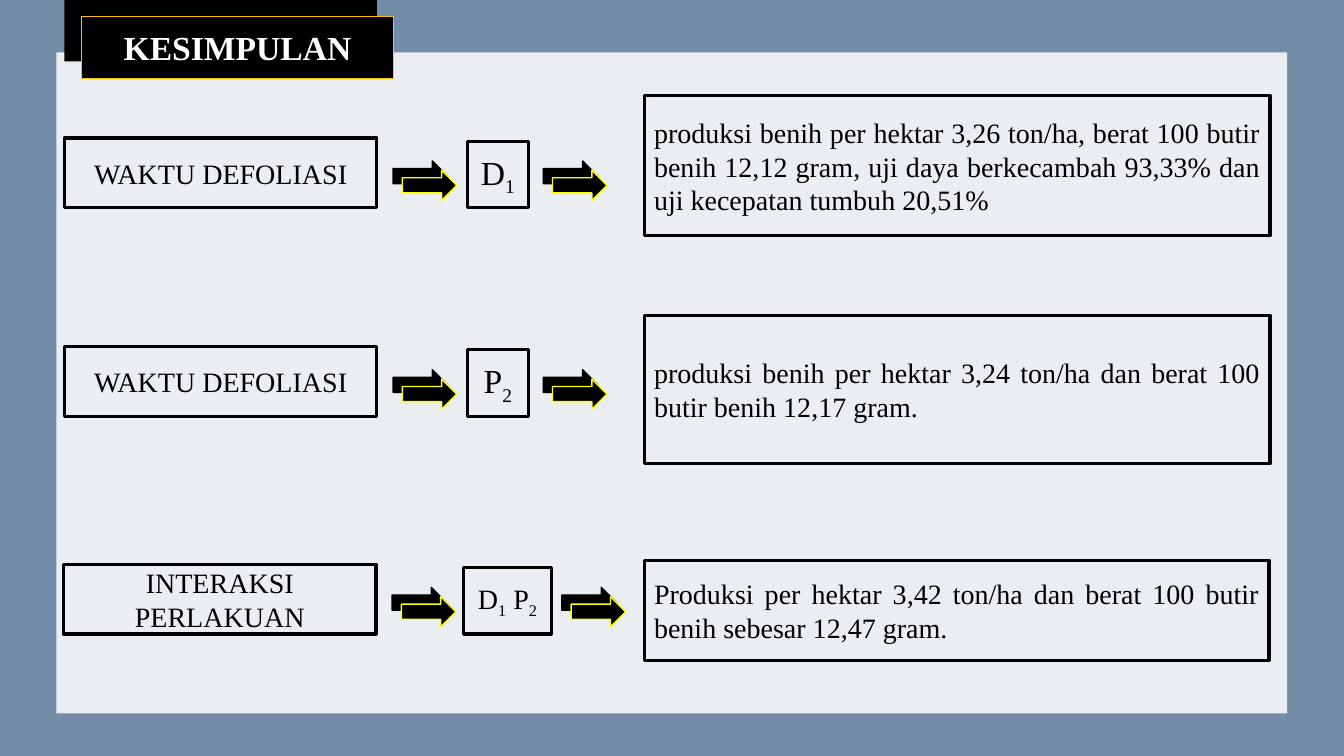
from itertools import groupby
from lxml import etree
from pptx import Presentation
from pptx.dml.color import RGBColor
from pptx.enum.shapes import MSO_SHAPE
from pptx.enum.text import MSO_ANCHOR, PP_ALIGN
from pptx.oxml.ns import qn
from pptx.util import Pt

RECT = MSO_SHAPE.RECTANGLE
ARROW = MSO_SHAPE.RIGHT_ARROW
MIDDLE = MSO_ANCHOR.MIDDLE
CENTER = PP_ALIGN.CENTER
JUSTIFY = PP_ALIGN.JUSTIFY

FONT = "Times New Roman"
COLORS = {
    "navy": "17406D",
    "white": "FFFFFF",
    "black": "000000",
    "yellow": "FFFF00",
    "gold": "FFC000",
}
WIDE, HIGH = 960, 540

ROWS = [
    {
        "box": (46.1, 98.6, 223.2, 49.7),
        "label": "WAKTU DEFOLIASI",
        "mark": "D1", "size": 24, "code": (334.1, 43.2), "next": 388.1,
        "text": "produksi benih per hektar 3,26 ton/ha, berat 100 butir benih 12,12 gram, "
                "uji daya berkecambah 93,33% dan uji kecepatan tumbuh 20,51%",
        "result": (460.1, 68.4, 447.1, 100.1),
    },
    {
        "box": (46.1, 247.7, 223.2, 49.7),
        "label": "WAKTU DEFOLIASI",
        "mark": "P2", "size": 24, "code": (334.1, 43.2), "next": 388.1,
        "text": "produksi benih per hektar 3,24 ton/ha dan berat 100 butir benih 12,17 gram.",
        "result": (460.1, 225.4, 447.1, 105.8),
    },
    {
        "box": (45.4, 403.2, 223.2, 49.7),
        "label": "INTERAKSI PERLAKUAN",
        "mark": "D1 P2", "size": 20, "code": (331.2, 62.6), "next": 401.4,
        "text": "Produksi per hektar 3,42 ton/ha dan berat 100 butir benih sebesar 12,47 gram.",
        "result": (460.1, 400.3, 446.4, 71.3),
    },
]


def tint(name):
    return RGBColor.from_string(COLORS[name])


def draw(slide, kind, box, fill=None, line=None, width=1):
    shape = slide.shapes.add_shape(kind, *[Pt(n) for n in box])
    shape.shadow.inherit = False
    if fill:
        shape.fill.solid()
        shape.fill.fore_color.rgb = tint(fill)
    else:
        shape.fill.background()
    if line:
        shape.line.color.rgb = tint(line)
        shape.line.width = Pt(width)
    else:
        shape.line.fill.background()
    return shape


def fade(shape, share):
    color = shape.fill._xPr.find(".//" + qn("a:srgbClr"))
    etree.SubElement(color, qn("a:alpha")).set("val", str(share * 1000))


def write(shape, text, size, align=CENTER, color="black", bold=False, sub=False):
    frame = shape.text_frame
    frame.word_wrap = True
    frame.vertical_anchor = MIDDLE
    para = frame.paragraphs[0]
    para.alignment = align
    parts = groupby(text, str.isdigit) if sub else [(False, text)]
    for low, chars in parts:
        run = para.add_run()
        run.text = "".join(chars)
        font = run.font
        font.name = FONT
        font.size = Pt(size)
        font.bold = bold
        font.color.rgb = tint(color)
        if low:
            run._r.get_or_add_rPr().set("baseline", "-25000")


def frame(slide, box, text, size=20, align=CENTER, sub=False):
    shape = draw(slide, RECT, box, line="black", width=2.25)
    write(shape, text, size, align, sub=sub)


def arrows(slide, left, top):
    for step, line in enumerate(["black", "yellow"]):
        shift = 6.6 * step
        draw(slide, ARROW, (left + shift, top + shift, 38.9, 21.6), "black", line)


def ground(slide, box):
    left, top, width, height = box
    fade(draw(slide, RECT, box, "navy"), 60)
    inner = (left + 40.3, top + 37.4, width - 80.8, height - 67.7)
    fade(draw(slide, RECT, inner, "white"), 85)


def row(slide, box, data):
    left, top, width, height = box
    frame(slide, box, data["label"])
    arrows(slide, left + width + 11.5, top + 16.4)
    spot, wide = data["code"]
    frame(slide, (spot, top + 2.2, wide, height - 2.2), data["mark"], data["size"], sub=True)
    frame(slide, data["result"], data["text"], align=JUSTIFY)
    arrows(slide, data["next"], top + 16.4)


def title(slide, box):
    left, top, width, height = box
    draw(slide, RECT, box, "black")
    front = draw(slide, RECT, (left + 12, top + 12, width, height), "black", "gold")
    write(front, "KESIMPULAN", 24, color="white", bold=True)


def main():
    deck = Presentation()
    deck.slide_width, deck.slide_height = Pt(WIDE), Pt(HIGH)
    slide = deck.slides.add_slide(deck.slide_layouts[6])
    ground(slide, (0, 0, WIDE, HIGH))
    for data in ROWS:
        row(slide, data["box"], data)
    title(slide, (46.1, 0, 223.2, 43.9))
    deck.save("out.pptx")


if __name__ == "__main__":
    main()
